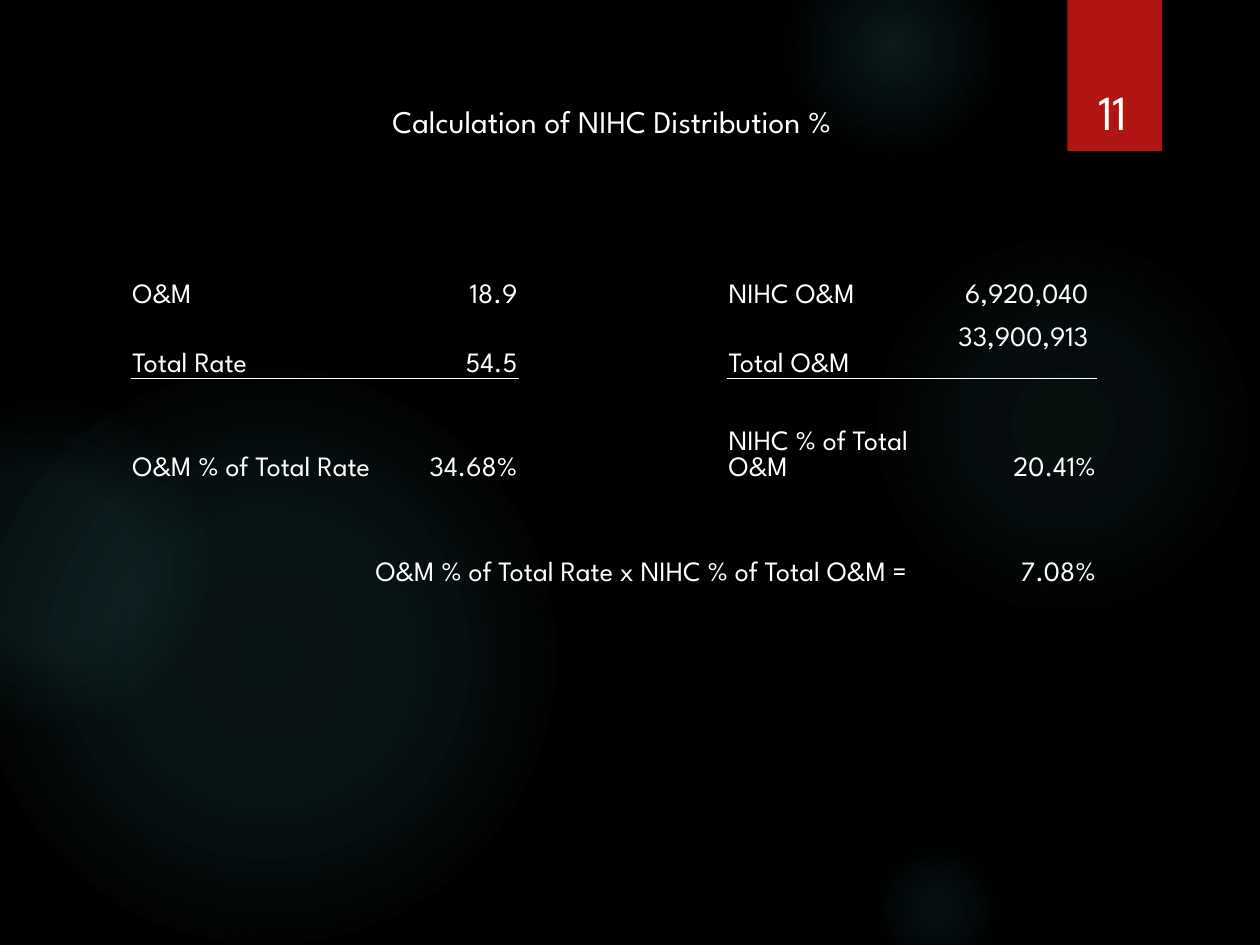
from lxml.etree import SubElement as Sub
from pptx import Presentation
from pptx.dml.color import RGBColor as RGB
from pptx.enum.shapes import MSO_SHAPE as Kind
from pptx.enum.text import MSO_ANCHOR as Anchor, PP_ALIGN as Align
from pptx.oxml import parse_xml
from pptx.oxml.ns import nsdecls, qn
from pptx.util import Cm, Pt

FONT, WHITE, GLOW = "League Spartan", "FFFFFF", "50B9C1"
NO_STYLE = "{2D5ABB26-0587-4C30-8999-92F81FD0307C}"


def color(text):
    return RGB.from_string(text)


def write(frame, text, size, align):
    """Fill the first paragraph; an empty one only gets its line size."""
    para = frame.paragraphs[0]
    para.alignment = align
    if not text:
        Sub(para._p, qn("a:endParaRPr"), sz=str(size * 100))
        return
    run = para.add_run()
    run.text = text
    for key, value in {"name": FONT, "size": Pt(size)}.items():
        setattr(run.font, key, value)
    run.font.color.rgb = color(WHITE)


deck = Presentation()
deck.slide_width, deck.slide_height = Cm(25.4), Cm(19.05)
slide = deck.slides.add_slide(deck.slide_layouts[6])
back = slide.background.fill
back.solid()
back.fore_color.rgb = color("000000")

# Soft glows: left, top, diameter, then (position %, opacity %) stops
glows = [
    (17.5, 4.65, 7.82, [(0, 7), (36, 6), (69, 0)]),
    (15.8, -1.27, 4.45, [(0, 14), (36, 7), (73, 0)]),
    (17.5, 16.94, 2.74, [(0, 9), (36, 5), (66, 0)]),
    (-0.43, 7.42, 11.63, [(0, 11), (36, 10), (75, 0)]),
    (-2.34, 8.05, 6.55, [(0, 8), (36, 8), (72, 0)]),
]
for left, top, size, stops in glows:
    glow = slide.shapes.add_shape(Kind.OVAL, Cm(left), Cm(top), Cm(size), Cm(size))
    glow.shadow.inherit = False
    glow.line.fill.background()
    marks = "".join(
        f'<a:gs pos="{pos * 1000}"><a:srgbClr val="{GLOW}">'
        f'<a:alpha val="{alpha * 1000}"/></a:srgbClr></a:gs>'
        for pos, alpha in stops
    )
    glow._element.spPr.find(qn("a:prstGeom")).addnext(parse_xml(
        f'<a:gradFill {nsdecls("a")}><a:gsLst>{marks}</a:gsLst><a:path path="circle">'
        '<a:fillToRect l="50000" t="50000" r="50000" b="50000"/></a:path></a:gradFill>'
    ))

# Page tab
tab = slide.shapes.add_shape(Kind.RECTANGLE, Cm(21.52), 0, Cm(1.91), Cm(3.05))
tab.shadow.inherit = False
tab.fill.solid()
tab.fill.fore_color.rgb = color("B01513")
tab.line.fill.background()
tab._element.spPr.find(qn("a:effectLst")).append(parse_xml(
    f'<a:outerShdw {nsdecls("a")} blurRad="{Pt(3)}" dist="{Pt(2)}" dir="5400000" rotWithShape="0">'
    '<a:srgbClr val="000000"><a:alpha val="45000"/></a:srgbClr></a:outerShdw>'
))

# Page number and title
labels = [
    ("11", 28, Anchor.BOTTOM, (21.56, 0.82, 1.75, 2.13)),
    ("Calculation of NIHC Distribution %", 18, Anchor.TOP, (2.08, 1.93, 20.52, 1.02)),
]
for text, size, anchor, place in labels:
    frame = slide.shapes.add_textbox(*map(Cm, place)).text_frame
    frame.word_wrap = True
    frame.vertical_anchor = anchor
    write(frame, text, size, Align.CENTER)

# Calculation table
rows = [
    ["O&M", "18.9", "", "", "NIHC O&M", "6,920,040"],
    ["Total Rate", "54.5", "", "", "Total O&M", "33,900,913"],
    [""] * 6,
    ["O&M % of Total Rate", "34.68%", "", "", "NIHC % of Total O&M", "20.41%"],
    [""] * 6,
    [""] * 6,
    ["", "O&M % of Total Rate x NIHC % of Total O&M =", "", "", "", "7.08%"],
]
widths = [4.9, 2.92, 2.1, 2.1, 4.55, 2.91]
heights = [1.37, 1.38, 0.7, 1.37, 0.7, 0.7, 0.7]
grid = slide.shapes.add_table(
    len(rows), len(widths), Cm(2.64), Cm(4.88), Cm(sum(widths)), Cm(sum(heights))
).table
grid.first_row = grid.horz_banding = False
grid._tbl.tblPr.find(qn("a:tableStyleId")).text = NO_STYLE
for col, width in zip(grid.columns, widths):
    col.width = Cm(width)
for row, height in zip(grid.rows, heights):
    row.height = Cm(height)
grid.cell(6, 1).merge(grid.cell(6, 4))

form = {
    "vertical_anchor": Anchor.BOTTOM,
    "margin_left": Cm(0.03),
    "margin_right": Cm(0.03),
    "margin_top": Cm(0.03),
    "margin_bottom": 0,
}
for r, texts in enumerate(rows):
    for c, text in enumerate(texts):
        cell = grid.cell(r, c)
        for key, value in form.items():
            setattr(cell, key, value)
        cell.fill.background()
        right = c in (1, 5) and not cell.is_merge_origin
        write(cell.text_frame, text, 16, Align.RIGHT if right else Align.LEFT)
        if r == 1 and text:
            props = cell._tc.get_or_add_tcPr()
            edge = Sub(props, qn("a:lnB"), w=str(Pt(1)))
            Sub(Sub(edge, qn("a:solidFill")), qn("a:srgbClr"), val=WHITE)
            props.insert(0, edge)

# The two amounts sit in from the edge, the second one line higher
for r in (0, 1):
    grid.cell(r, 5).margin_right = Cm(0.18)
grid.cell(1, 5).margin_bottom = Cm(0.52)

deck.save("out.pptx")
